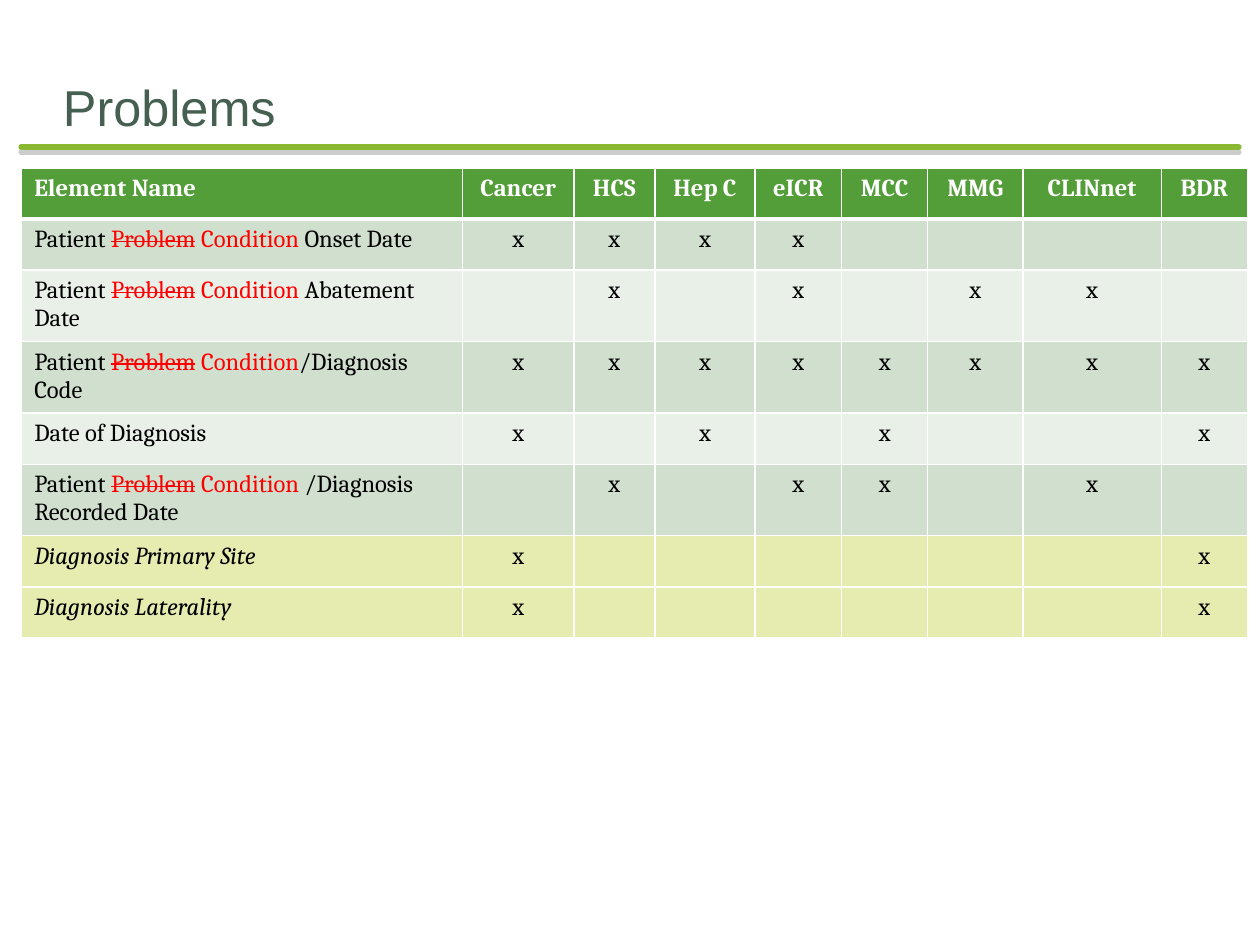
import pptx
import pptx.dml.color
import pptx.enum.shapes
import pptx.enum.text
import pptx.oxml
import pptx.util
from pptx.oxml.ns import nsdecls

Pt = pptx.util.Pt
ALIGN = pptx.enum.text.PP_ALIGN

HEADINGS = ["Element Name", "Cancer", "HCS", "Hep C", "eICR", "MCC", "MMG", "CLINnet", "BDR"]
WIDTHS = [252, 63.5, 46.3, 57.3, 49.5, 49.2, 54.4, 79.1, 49.2]
ROW_HEIGHT = 29.2
GREEN, DARK_BAND, LIGHT_BAND, YELLOW = "549E39", "D1DFCE", "E9F0E8", "E6ECB0"


def renamed(ending):
    return [("Patient ", {}), ("Problem", {"hue": "FF0000", "strike": True}),
            (" Condition", {"hue": "FF0000"}), (ending, {})]


ROWS = [
    (renamed(" Onset Date"), "xxxx----", DARK_BAND),
    (renamed(" Abatement Date"), "-x-x-xx-", LIGHT_BAND),
    (renamed("/Diagnosis Code"), "xxxxxxxx", DARK_BAND),
    ([("Date of Diagnosis", {})], "x-x-x--x", LIGHT_BAND),
    (renamed(" /Diagnosis Recorded Date"), "-x-xx-x-", DARK_BAND),
    ([("Diagnosis Primary Site", {"italic": True})], "x------x", YELLOW),
    ([("Diagnosis Laterality", {"italic": True})], "x------x", YELLOW),
]


def color(value):
    return pptx.dml.color.RGBColor.from_string(value)


class Slide:
    """Draws styled elements on one page."""

    title_font, table_font, table_size = "Arial", "Cambria", 14

    def __init__(self, page):
        self.page = page

    def style(self, span, font, size, hue="000000", bold=False, italic=False, strike=False):
        span.font.name, span.font.size = font, Pt(size)
        span.font.bold, span.font.italic = bold, italic
        span.font.color.rgb = color(hue)
        if strike:
            span.font._element.set("strike", "sngStrike")

    def title(self, text, left, top, width, height):
        box = self.page.shapes.add_textbox(Pt(left), Pt(top), Pt(width), Pt(height))
        frame = box.text_frame
        frame.word_wrap = True
        frame.vertical_anchor = pptx.enum.text.MSO_ANCHOR.BOTTOM
        frame.margin_left = frame.margin_right = frame.margin_bottom = 0
        frame.text = text
        self.style(frame.paragraphs[0].runs[0], self.title_font, 28.8, "455F51")

    def rule(self, left, right, y):
        line = self.page.shapes.add_connector(
            pptx.enum.shapes.MSO_CONNECTOR.STRAIGHT, Pt(left), Pt(y), Pt(right), Pt(y))
        line.line.color.rgb = color("8AB833")
        line.line.width = Pt(3)
        line.line._ln.set("cap", "rnd")
        line._element.spPr.append(pptx.oxml.parse_xml(
            f'<a:effectLst {nsdecls("a")}><a:outerShdw dist="{Pt(3)}" dir="5400000" '
            'algn="ctr" rotWithShape="0"><a:srgbClr val="808080"><a:alpha val="40000"/>'
            '</a:srgbClr></a:outerShdw></a:effectLst>'))

    def cell(self, cell, spans, fill, align, top=1, bottom=1):
        for side, width in zip("LRTB", (1, 1, top, bottom)):
            cell._tc.get_or_add_tcPr().append(pptx.oxml.parse_xml(
                f'<a:ln{side} {nsdecls("a")} w="{Pt(width)}"><a:solidFill>'
                f'<a:srgbClr val="FFFFFF"/></a:solidFill></a:ln{side}>'))
        cell.fill.solid()
        cell.fill.fore_color.rgb = color(fill)
        para = cell.text_frame.paragraphs[0]
        para.alignment = align
        for text, look in spans:
            span = para.add_run()
            span.text = text
            self.style(span, self.table_font, self.table_size, **look)

    def table(self, left, top):
        table = self.page.shapes.add_table(
            len(ROWS) + 1, len(WIDTHS), Pt(left), Pt(top),
            Pt(sum(WIDTHS)), Pt(ROW_HEIGHT * (len(ROWS) + 1))).table
        for column, width in zip(table.columns, WIDTHS):
            column.width = Pt(width)
        for row in table.rows:
            row.height = Pt(ROW_HEIGHT)
        for column, heading in enumerate(HEADINGS):
            align = ALIGN.CENTER if column else ALIGN.LEFT
            self.cell(table.cell(0, column), [(heading, {"hue": "FFFFFF", "bold": True})],
                      GREEN, align, bottom=3)
        for row, (name, marks, fill) in enumerate(ROWS, 1):
            edge = 3 if row == 1 else 1
            self.cell(table.cell(row, 0), name, fill, ALIGN.LEFT, top=edge)
            for column, mark in enumerate(marks, 1):
                spans = [(mark, {})] if mark == "x" else []
                self.cell(table.cell(row, column), spans, fill, ALIGN.CENTER, top=edge)


def main():
    deck = pptx.Presentation()
    deck.slide_width, deck.slide_height = Pt(720), Pt(540)
    slide = Slide(deck.slides.add_slide(deck.slide_layouts[6]))
    slide.rule(12, 708, 84)
    slide.title("Problems", 36, 36, 648, 42)
    slide.table(12.4, 96)
    deck.save("out.pptx")


if __name__ == "__main__":
    main()
